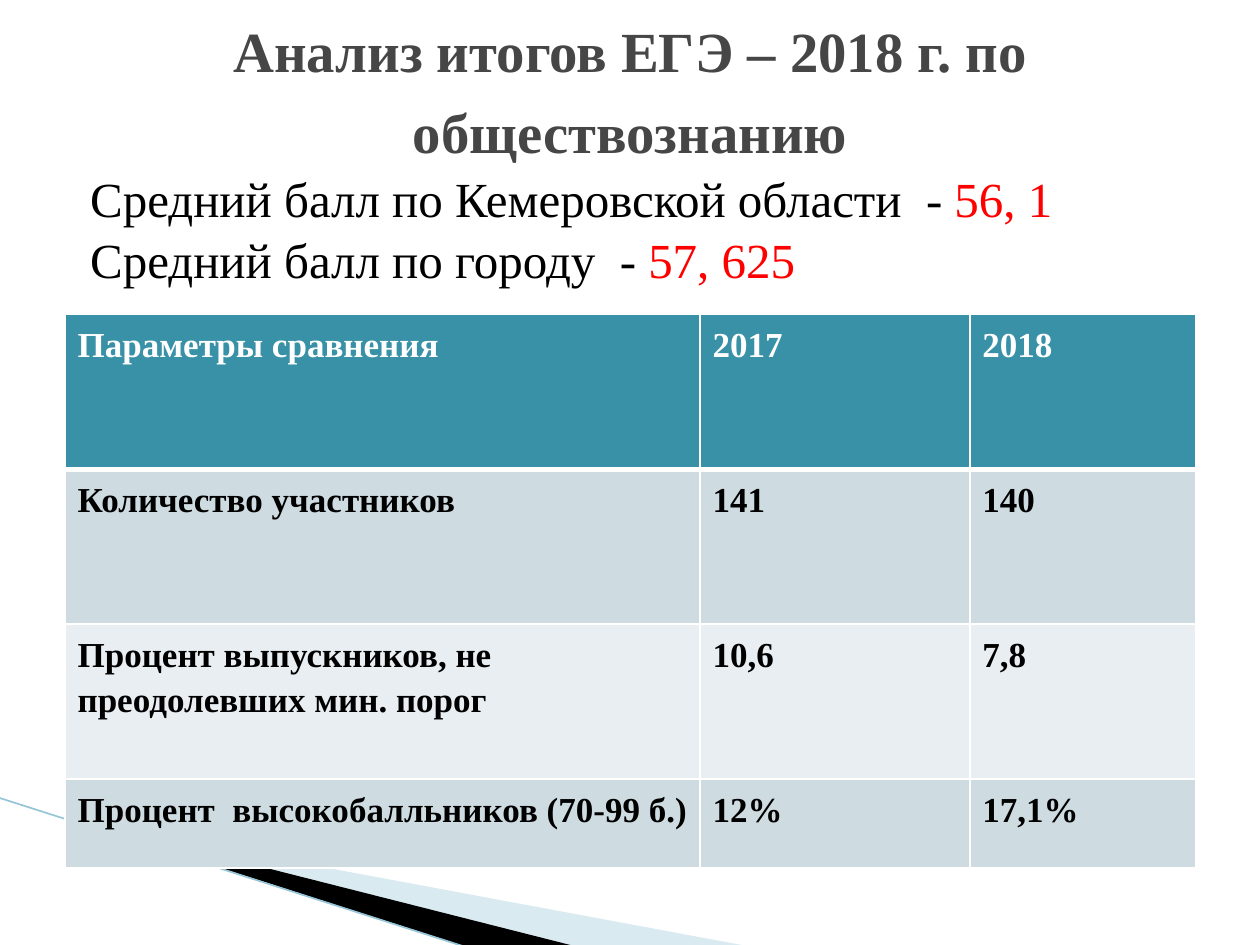
import lxml.etree
import pptx
import pptx.dml.color
import pptx.enum.shapes
import pptx.enum.text
import pptx.oxml
import pptx.oxml.ns
import pptx.util

Cm = pptx.util.Cm
Pt = pptx.util.Pt
qn = pptx.oxml.ns.qn
ALIGN = pptx.enum.text.PP_ALIGN
ANCHOR = pptx.enum.text.MSO_ANCHOR


def colour(value):
    """Return the RGB colour of a hex string."""
    return pptx.dml.color.RGBColor.from_string(value)


def write(paragraph, text, size=20, ink="000000", bold=False):
    """Add a formatted run to a paragraph."""
    run = paragraph.add_run()
    run.text = text
    run.font.name = "Times New Roman"
    run.font.size = Pt(size)
    run.font.bold = bold
    run.font.color.rgb = colour(ink)


def add_wedge(slide, left, top, points, fill, opacity=100):
    """Draw a filled polygon with points relative to the given corner."""
    corners = [(Cm(left + x), Cm(top + y)) for x, y in points]
    builder = slide.shapes.build_freeform(*corners[0])
    builder.add_line_segments(corners[1:], close=True)
    wedge = builder.convert_to_shape()
    wedge.shadow.inherit = False
    wedge.fill.solid()
    wedge.fill.fore_color.rgb = colour(fill)
    wedge.line.fill.background()
    if opacity < 100:
        tint = wedge.fill._xPr.find(".//" + qn("a:srgbClr"))
        lxml.etree.SubElement(tint, qn("a:alpha"), val=str(opacity * 1000))


def add_corner(slide, left, top):
    """Draw the wedges and the edge line at the bottom left."""
    pale = [(1.4, 0.53), (15.11, 3.08), (11.58, 3.08), (1.4, 0.51)]
    dark = [(1.35, 0.48), (11.61, 3.08), (9.45, 3.1), (1.37, 0.51)]
    add_wedge(slide, left, top, pale, "A0CBDC", opacity=40)
    add_wedge(slide, left, top, dark, "000000")
    edge = slide.shapes.add_connector(
        pptx.enum.shapes.MSO_CONNECTOR.STRAIGHT,
        Cm(left - 0.03), Cm(top + 0.08), Cm(left + 9.42), Cm(top + 3.1))
    edge.line.color.rgb = colour("97C5D8")
    edge.line.width = Pt(0.95)
    lxml.etree.SubElement(edge._element.spPr, qn("a:effectLst"))


def add_scores(slide, left, top, width, height):
    """Place the average scores, one to a line."""
    scores = slide.shapes.add_textbox(Cm(left), Cm(top), Cm(width), Cm(height)).text_frame
    scores.word_wrap = True
    scores.margin_left = Cm(0.55)
    scores.margin_top = Cm(0.27)
    region, city = scores.paragraphs[0], scores.add_paragraph()
    city.space_before = Pt(1.5)
    for line, label, score in (
            (region, "Средний балл по Кемеровской области  - ", "56, 1"),
            (city, "Средний балл по городу  - ", "57, 625")):
        write(line, label, size=28)
        write(line, score, size=28, ink="FF0000")


def add_title(slide, left, top, width, height):
    """Place the centred heading."""
    heading = slide.shapes.add_textbox(Cm(left), Cm(top), Cm(width), Cm(height)).text_frame
    heading.word_wrap = True
    heading.vertical_anchor = ANCHOR.MIDDLE
    heading.margin_bottom = Cm(1.45)
    line = heading.paragraphs[0]
    line.alignment = ALIGN.CENTER
    line.line_spacing = 1.2
    write(line, "Анализ итогов ЕГЭ – 2018 г. по обществознанию",
          size=32.4, ink="464646", bold=True)


def add_borders(cell, top, bottom):
    """Give a cell white borders, with top and bottom widths in points."""
    properties = cell._tc.get_or_add_tcPr()
    sides = (("lnL", 1), ("lnR", 1), ("lnT", top), ("lnB", bottom))
    for place, (side, width) in enumerate(sides):
        border = lxml.etree.Element(qn("a:" + side), w=str(Pt(width)))
        fill = lxml.etree.SubElement(border, qn("a:solidFill"))
        lxml.etree.SubElement(fill, qn("a:srgbClr"), val="FFFFFF")
        properties.insert(place, border)


def add_comparison(slide, left, top, widths, heights):
    """Place the table that compares the two years."""
    rows = [
        ("Параметры сравнения", "2017", "2018"),
        ("Количество участников", "141", "140"),
        ("Процент выпускников, не преодолевших мин. порог", "10,6", "7,8"),
        ("Процент  высокобалльников (70-99 б.)", "12%", "17,1%"),
    ]
    fills = ["3891A7", "CEDCE1", "E8EEF1", "CEDCE1"]
    comparison = slide.shapes.add_table(
        len(rows), len(widths), Cm(left), Cm(top),
        Cm(sum(widths)), Cm(sum(heights))).table
    for column, width in zip(comparison.columns, widths):
        column.width = Cm(width)
    for r, values in enumerate(rows):
        comparison.rows[r].height = Cm(heights[r])
        for c, value in enumerate(values):
            cell = comparison.cell(r, c)
            cell.fill.solid()
            cell.fill.fore_color.rgb = colour(fills[r])
            add_borders(cell, top=3 if r == 1 else 1, bottom=3 if r == 0 else 1)
            line = cell.text_frame.paragraphs[0]
            line.line_spacing = 1.15
            if c == 1:
                line.space_after = Pt(10)
            write(line, value, ink="000000" if r else "FFFFFF", bold=True)


def main():
    """Build and save the slide."""
    deck = pptx.Presentation()
    deck.slide_width, deck.slide_height = Cm(25.4), Cm(19.05)
    slide = deck.slides.add_slide(deck.slide_layouts[6])
    add_corner(slide, 0, 16)
    add_scores(slide, 1.27, 3.12, 23.24, 13.56)
    add_title(slide, 1.27, 0.76, 22.86, 3.18)
    add_comparison(slide, 1.31, 6.34, [12.8, 5.44, 4.55], [3.12, 3.12, 3.12, 1.8])
    deck.save("out.pptx")


if __name__ == "__main__":
    main()
